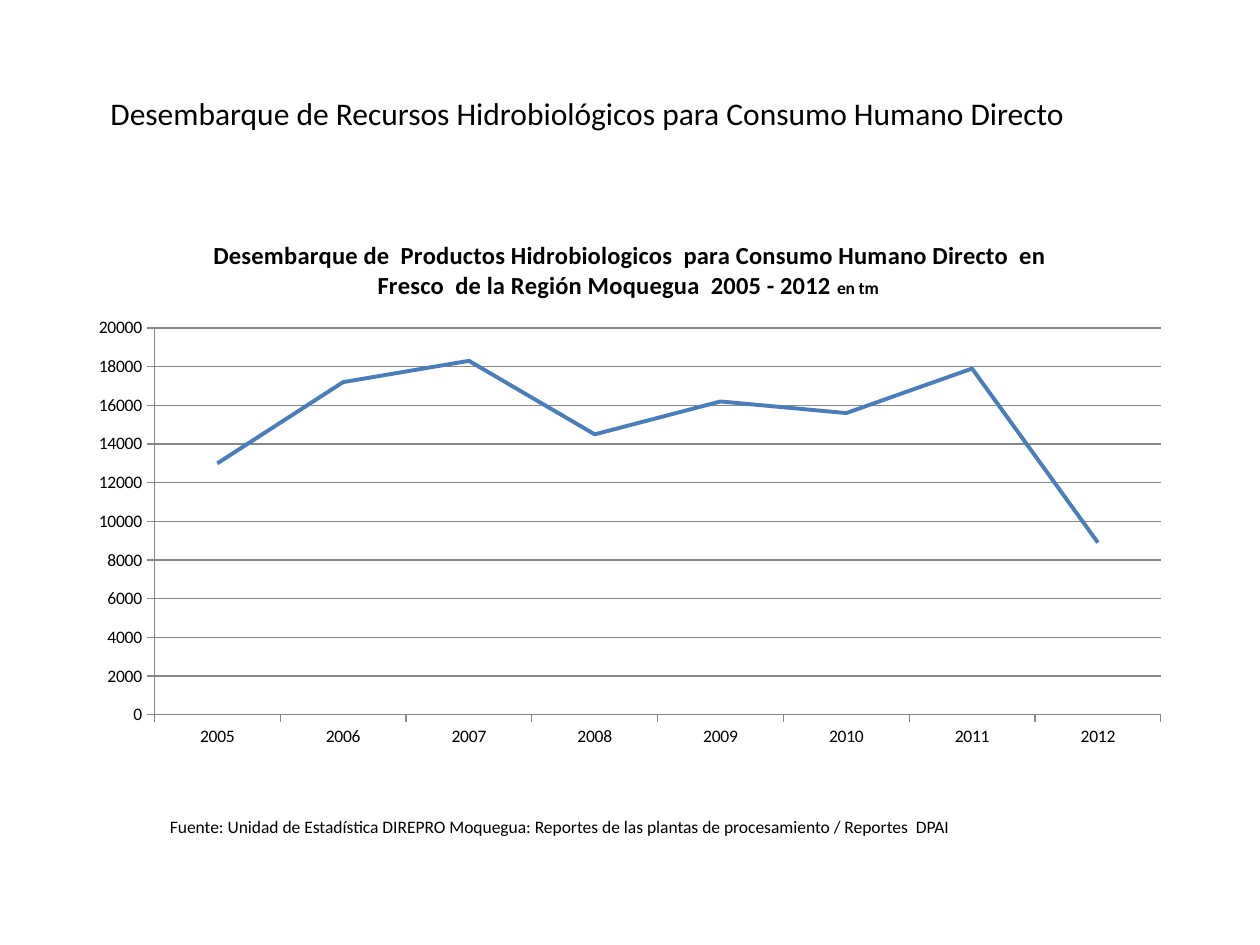
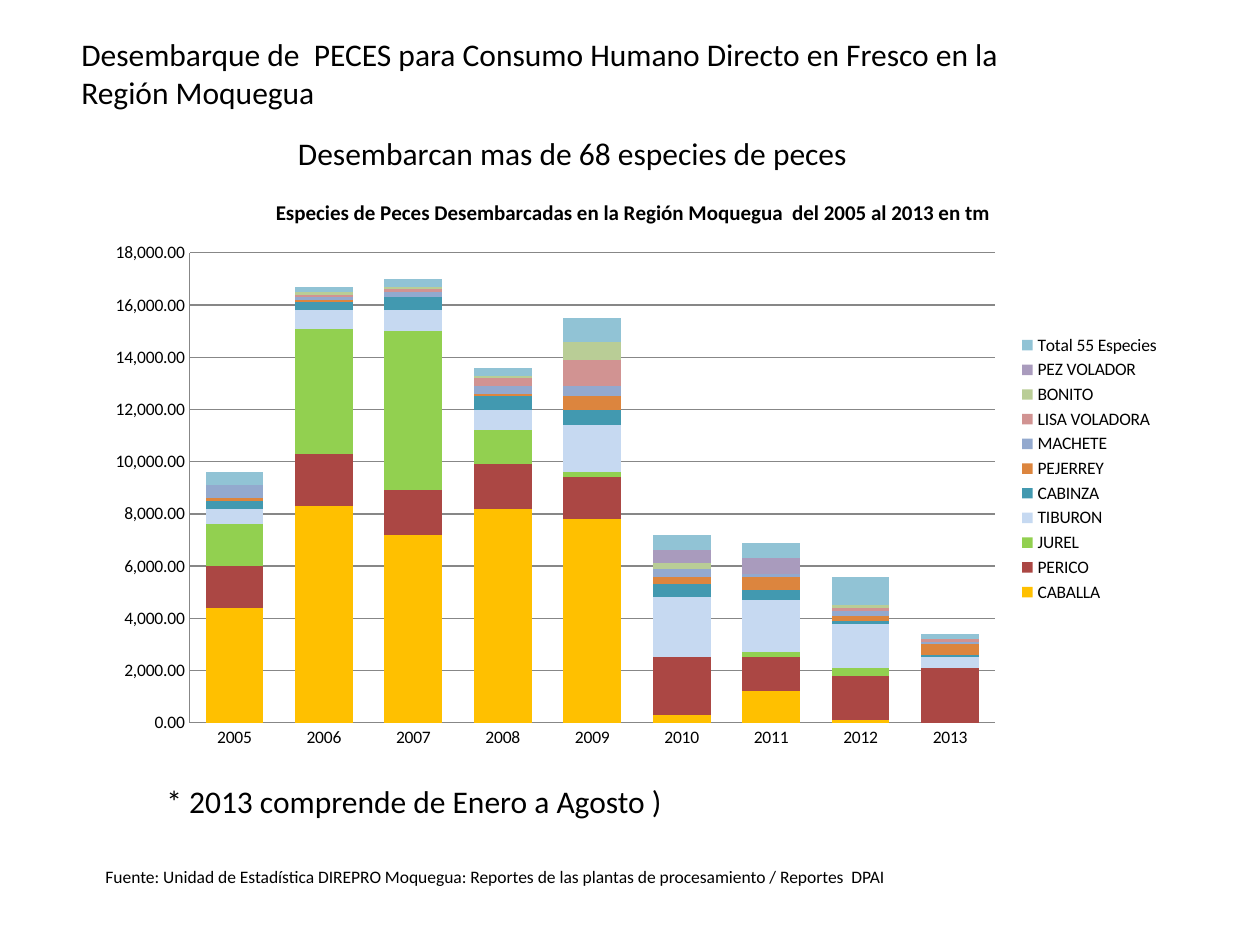
"""Build two slides on fish landings for direct human consumption in the Moquegua region."""
from lxml import etree
from pptx import Presentation
from pptx.chart.data import CategoryChartData
from pptx.dml.color import RGBColor
from pptx.enum.chart import XL_CHART_TYPE, XL_LEGEND_POSITION, XL_TICK_MARK
from pptx.util import Pt

LINE, STACKED = XL_CHART_TYPE.LINE, XL_CHART_TYPE.COLUMN_STACKED
TICK_OUT, TICK_NONE = XL_TICK_MARK.OUTSIDE, XL_TICK_MARK.NONE
LEGEND_RIGHT = XL_LEGEND_POSITION.RIGHT
FONT = "Calibri"
BLACK = RGBColor(0x00, 0x00, 0x00)
GRID_GREY = RGBColor(0x87, 0x87, 0x87)
LINE_BLUE = RGBColor(0x4A, 0x7E, 0xBB)
AMBER = RGBColor(0xFF, 0xC0, 0x00)
RED = RGBColor(0xAB, 0x47, 0x44)
LIME = RGBColor(0x92, 0xD0, 0x50)
PALE_BLUE = RGBColor(0xC6, 0xD9, 0xF1)
TEAL = RGBColor(0x42, 0x99, 0xB0)
ORANGE = RGBColor(0xDC, 0x85, 0x3E)
PERIWINKLE = RGBColor(0x93, 0xA9, 0xCE)
ROSE = RGBColor(0xD1, 0x93, 0x92)
SAGE = RGBColor(0xB9, 0xCD, 0x96)
LILAC = RGBColor(0xA9, 0x9B, 0xBD)
SKY = RGBColor(0x91, 0xC3, 0xD5)

HEADING_SIZE, SMALL_SIZE = 18, 10
SOURCE = ("Fuente: Unidad de Estadística DIREPRO Moquegua: Reportes de las plantas "
          "de procesamiento / Reportes  DPAI")

SLIDES = [
    {
        "texts": [
            ("Desembarque de Recursos Hidrobiológicos para Consumo Humano Directo",
             (56, 50.4, 586, 29), HEADING_SIZE, False),
            (SOURCE, (90, 463, 518, 19.4), SMALL_SIZE, True),
        ],
        "chart": {
            "type": LINE,
            "box": (44, 124, 632, 309.6),
            "plot": (0.07, 0.205, 0.91, 0.714),
            "title": [("Desembarque de  Productos Hidrobiologicos  para Consumo Humano Directo  en "
                       "Fresco  de la Región Moquegua  2005 - 2012 ", 14), ("en tm ", 10)],
            "years": range(2005, 2013),
            "maximum": 20000,
            "format": "0",
            "tick": TICK_OUT,
            "series": [("Desembarque", LINE_BLUE,
                        (13000, 17200, 18300, 14500, 16200, 15600, 17900, 8900))],
        },
    },
    {
        "texts": [
            ("Desembarque de  PECES para Consumo Humano Directo en Fresco en la Región Moquegua",
             (39.4, 16.6, 546, 51), HEADING_SIZE, True),
            ("Desembarcan mas de 68 especies de peces", (163.2, 73.2, 336, 29), HEADING_SIZE, False),
            ("* 2013 comprende de Enero a Agosto )", (88, 443.6, 301, 29), HEADING_SIZE, False),
            (SOURCE, (53.2, 491.4, 518, 19.4), SMALL_SIZE, True),
        ],
        "chart": {
            "type": STACKED,
            "box": (54, 100.8, 618.4, 334),
            "plot": (0.088, 0.131, 0.744, 0.804),
            "title": [("Especies de Peces Desembarcadas en la Región Moquegua  del 2005 al 2013 en tm ", 12)],
            "years": range(2005, 2014),
            "maximum": 18000,
            "format": "#,##0.00",
            "tick": TICK_NONE,
            "series": [
                ("CABALLA", AMBER, (4400, 8300, 7200, 8200, 7800, 300, 1200, 100, 0)),
                ("PERICO", RED, (1600, 2000, 1700, 1700, 1600, 2200, 1300, 1700, 2100)),
                ("JUREL", LIME, (1600, 4800, 6100, 1300, 200, 0, 200, 300, 0)),
                ("TIBURON ", PALE_BLUE, (600, 700, 800, 800, 1800, 2300, 2000, 1700, 400)),
                ("CABINZA", TEAL, (300, 300, 500, 500, 600, 500, 400, 100, 100)),
                ("PEJERREY", ORANGE, (100, 100, 0, 100, 500, 300, 500, 200, 400)),
                ("MACHETE", PERIWINKLE, (500, 100, 200, 300, 400, 300, 100, 200, 100)),
                ("LISA VOLADORA", ROSE, (None, 100, 100, 300, 1000, 0, None, 100, 100)),
                ("BONITO", SAGE, (0, 100, 100, 100, 700, 200, 0, 100, 0)),
                ("PEZ VOLADOR", LILAC, (None, None, None, None, None, 500, 600, 0, None)),
                ("Total 55 Especies ", SKY, (500, 200, 300, 300, 900, 600, 600, 1100, 200)),
            ],
        },
    },
]


def add_run(paragraph, text, size, bold=False):
    run = paragraph.add_run()
    run.text = text
    run.font.name, run.font.size, run.font.bold = FONT, Pt(size), bold
    run.font.color.rgb = BLACK


def add_text(slide, text, box, size, wraps):
    frame = slide.shapes.add_textbox(*map(Pt, box)).text_frame
    frame.word_wrap = wraps
    add_run(frame.paragraphs[0], text, size)


def place_plot(chart, fractions):
    plot_area = chart.plots[0]._element.getparent()
    namespace = etree.QName(plot_area).namespace
    for old in plot_area.findall(f"{{{namespace}}}layout"):
        plot_area.remove(old)
    layout = etree.Element(f"{{{namespace}}}layout")
    manual = etree.SubElement(layout, f"{{{namespace}}}manualLayout")
    settings = [("layoutTarget", "inner"), ("xMode", "edge"), ("yMode", "edge"),
                *zip("xywh", fractions)]
    for tag, value in settings:
        etree.SubElement(manual, f"{{{namespace}}}{tag}", val=str(value))
    plot_area.insert(0, layout)


def style_axes(chart, content):
    values = chart.value_axis
    values.minimum_scale, values.maximum_scale, values.major_unit = 0, content["maximum"], 2000
    values.tick_labels.number_format = content["format"]
    values.tick_labels.number_format_is_linked = False
    values.has_major_gridlines = True
    for axis in (values, chart.category_axis):
        axis.major_tick_mark = content["tick"]
        axis.minor_tick_mark = TICK_NONE
    for line in (values.major_gridlines.format.line, values.format.line,
                 chart.category_axis.format.line):
        line.color.rgb, line.width = GRID_GREY, Pt(0.75)


def add_landings_chart(slide, content):
    data = CategoryChartData(number_format=content["format"])
    data.categories = [str(year) for year in content["years"]]
    for name, _, tonnes in content["series"]:
        data.add_series(name, tonnes)
    chart = slide.shapes.add_chart(content["type"], *map(Pt, content["box"]), data).chart
    chart.font.name, chart.font.size = FONT, Pt(SMALL_SIZE)
    chart.font.color.rgb = BLACK
    chart.has_title = True
    chart.chart_title.include_in_layout = False
    for text, size in content["title"]:
        add_run(chart.chart_title.text_frame.paragraphs[0], text, size, True)
    style_axes(chart, content)
    place_plot(chart, content["plot"])

    plot = chart.plots[0]
    plot.vary_by_categories = False
    stacked = content["type"] == STACKED
    chart.has_legend = stacked
    if stacked:
        plot.gap_width, plot.overlap = 55, 100
        chart.legend.position = LEGEND_RIGHT
        chart.legend.include_in_layout = False
    for series, (_, color, _) in zip(plot.series, content["series"]):
        if stacked:
            series.format.fill.solid()
            series.format.fill.fore_color.rgb = color
        else:
            series.smooth = False
            series.format.line.color.rgb, series.format.line.width = color, Pt(2.25)


def main():
    deck = Presentation()
    deck.slide_width, deck.slide_height = Pt(720), Pt(540)
    for content in SLIDES:
        slide = deck.slides.add_slide(deck.slide_layouts[6])
        for text in content["texts"]:
            add_text(slide, *text)
        add_landings_chart(slide, content["chart"])
    deck.save("out.pptx")


if __name__ == "__main__":
    main()
